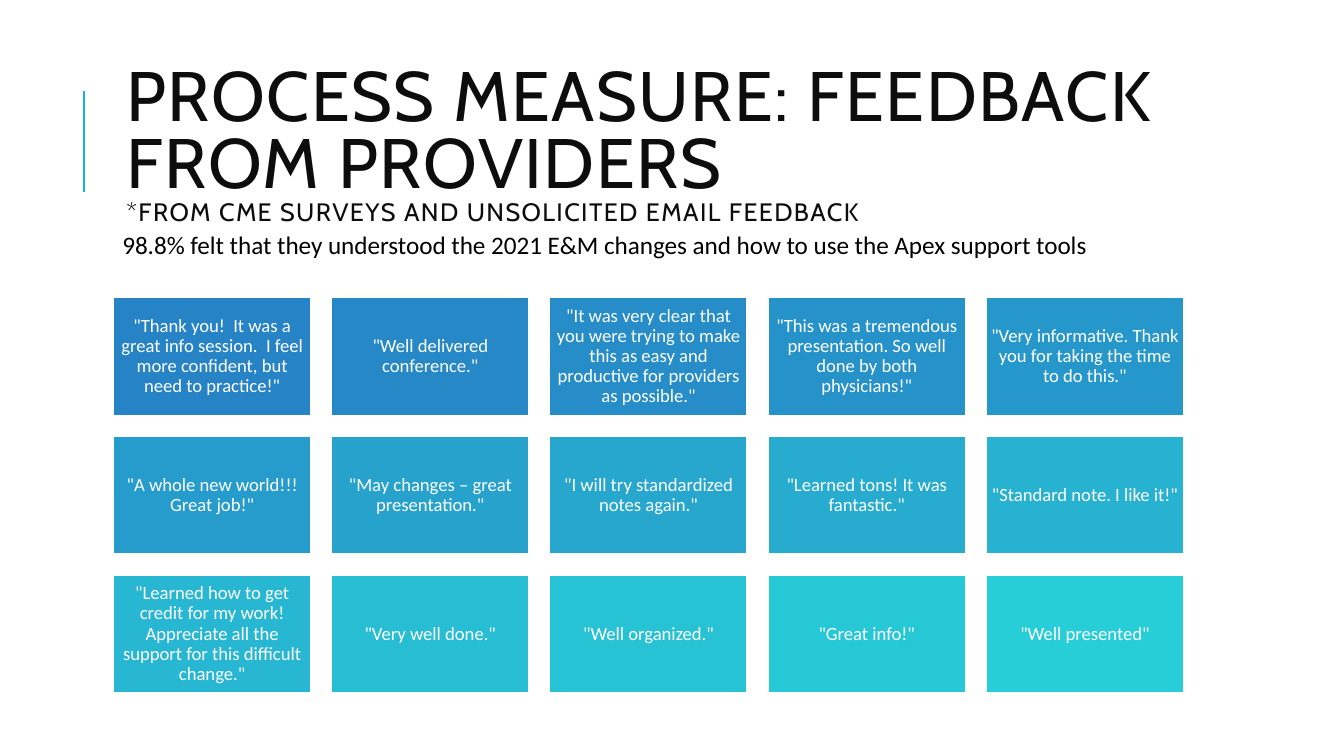
from colorsys import hls_to_rgb, rgb_to_hls

from lxml.etree import SubElement
from pptx import Presentation
from pptx.dml.color import RGBColor
from pptx.enum.shapes import MSO_CONNECTOR, MSO_SHAPE
from pptx.enum.text import MSO_ANCHOR, PP_ALIGN
from pptx.oxml.ns import qn
from pptx.util import Inches, Pt

UNIT = Inches(0.1)
SLIDE_COLUMNS, SLIDE_ROWS = 100, 56.25
GRID_COLUMNS, GRID_ROWS = 5, 3
GAP_SHARE = 0.1

ACCENT = RGBColor(0x1C, 0xAD, 0xE4)
TITLE_COLOR = RGBColor(0x0D, 0x0D, 0x0D)
BLACK = RGBColor(0x00, 0x00, 0x00)
WHITE = RGBColor(0xFF, 0xFF, 0xFF)
FIRST_CARD = RGBColor(0x26, 0x83, 0xC6)
LAST_CARD = RGBColor(0x27, 0xCE, 0xD7)

TITLE = "PROCESS MEASURE: FEEDBACK FROM PROVIDERS"
SUBTITLE = "*FROM CME SURVEYS AND UNSOLICITED EMAIL FEEDBACK"
FINDING = "98.8% felt that they understood the 2021 E&M changes and how to use the Apex support tools"
QUOTES = [
    '"Thank you!  It was a great info session.  I feel more confident, but need to practice!"',
    '"Well delivered conference."',
    '"It was very clear that you were trying to make this as easy and productive for providers as possible."',
    '"This was a tremendous presentation. So well done by both physicians!"',
    '"Very informative. Thank you for taking the time to do this."',
    '"A whole new world!!! Great job!"',
    '"May changes – great presentation."',
    '"I will try standardized notes again."',
    '"Learned tons! It was fantastic."',
    '"Standard note. I like it!"',
    '"Learned how to get credit for my work! Appreciate all the support for this difficult change."',
    '"Very well done."',
    '"Well organized."',
    '"Great info!"',
    '"Well presented"',
]


def grid_box(*lengths):
    """Turn grid columns and rows into slide lengths."""
    return [round(length * UNIT) for length in lengths]


def set_margins(text_frame, horizontal, vertical):
    """Set equal margins on opposite sides, in inches."""
    text_frame.margin_left = text_frame.margin_right = Inches(horizontal)
    text_frame.margin_top = text_frame.margin_bottom = Inches(vertical)


def blend(share):
    """Return the card colour at a share of the way through hue, lightness and saturation."""
    first, last = (
        rgb_to_hls(*(channel / 255 for channel in color))
        for color in (FIRST_CARD, LAST_CARD)
    )
    mixed = (start + (end - start) * share for start, end in zip(first, last))
    return RGBColor(*(round(channel * 255) for channel in hls_to_rgb(*mixed)))


def add_accent_rule(slide, left, top, height):
    """Draw the thin vertical rule beside the title."""
    rule = slide.shapes.add_connector(
        MSO_CONNECTOR.STRAIGHT, left, top + height, left, top
    )
    rule.line.color.rgb = ACCENT
    rule.line.width = Pt(1.5)
    SubElement(rule._element.spPr, qn("a:effectLst"))


def add_title(slide, left, top, width, height):
    """Fill the title placeholder with a heading and its smaller source line."""
    title = slide.shapes.title
    title.left, title.top, title.width, title.height = left, top, width, height
    text_frame = title.text_frame
    text_frame.word_wrap = True
    text_frame.vertical_anchor = MSO_ANCHOR.MIDDLE
    set_margins(text_frame, 0.1, 0.05)
    paragraph = text_frame.paragraphs[0]
    paragraph.alignment = PP_ALIGN.LEFT
    paragraph.line_spacing = 0.8
    for text, size in ((TITLE, 37.5), (SUBTITLE, 13.5)):
        if paragraph.runs:
            paragraph.add_line_break()
        run = paragraph.add_run()
        run.text = text
        run.font.size = Pt(size)
        run.font.name = "Cabin"
        run.font.color.rgb = TITLE_COLOR
        run.font._element.set("spc", "80")


def add_finding(slide, left, top, width, height):
    """Place the one-line survey result."""
    text_frame = slide.shapes.add_textbox(left, top, width, height).text_frame
    text_frame.word_wrap = True
    set_margins(text_frame, 0.07, 0.04)
    paragraph = text_frame.paragraphs[0]
    paragraph.text = FINDING
    paragraph.font.size = Pt(13.5)
    paragraph.font.name = "Calibri"
    paragraph.font.color.rgb = BLACK


def add_card(shapes, quote, color, left, top, width, height):
    """Draw one quote card."""
    card = shapes.add_shape(MSO_SHAPE.RECTANGLE, left, top, width, height)
    card.shadow.inherit = False
    card.fill.solid()
    card.fill.fore_color.rgb = color
    card.line.color.rgb = WHITE
    card.line.width = Pt(1.25)
    text_frame = card.text_frame
    text_frame.word_wrap = True
    text_frame.vertical_anchor = MSO_ANCHOR.MIDDLE
    set_margins(text_frame, 0.04, 0.04)
    paragraph = text_frame.paragraphs[0]
    paragraph.text = quote
    paragraph.alignment = PP_ALIGN.CENTER
    paragraph.line_spacing = 0.9
    paragraph.font.size = Pt(10)
    paragraph.font.name = "Calibri"
    paragraph.font.color.rgb = WHITE


def add_quote_grid(slide, left, top, width, height):
    """Lay the quotes out in a grouped grid with equal gaps."""
    group = slide.shapes.add_group_shape()
    card_width = width / (GRID_COLUMNS + (GRID_COLUMNS - 1) * GAP_SHARE)
    gap = card_width * GAP_SHARE
    card_height = (height - (GRID_ROWS - 1) * gap) / GRID_ROWS
    for index, quote in enumerate(QUOTES):
        row, column = divmod(index, GRID_COLUMNS)
        add_card(
            group.shapes,
            quote,
            blend(index / (len(QUOTES) - 1)),
            round(left + column * (card_width + gap)),
            round(top + row * (card_height + gap)),
            round(card_width),
            round(card_height),
        )


def main():
    """Build and save the feedback slide."""
    presentation = Presentation()
    presentation.slide_width, presentation.slide_height = grid_box(
        SLIDE_COLUMNS, SLIDE_ROWS
    )
    slide = presentation.slides.add_slide(presentation.slide_layouts[5])
    add_accent_rule(slide, *grid_box(6.25, 6.8, 7.5))
    add_title(slide, *grid_box(8.4, 4.8, 79.7, 12.3))
    add_quote_grid(slide, *grid_box(8.4, 22.1, 79.7, 29.5))
    add_finding(slide, *grid_box(8.4, 16.7, 76.1, 3))
    presentation.save("out.pptx")


if __name__ == "__main__":
    main()
